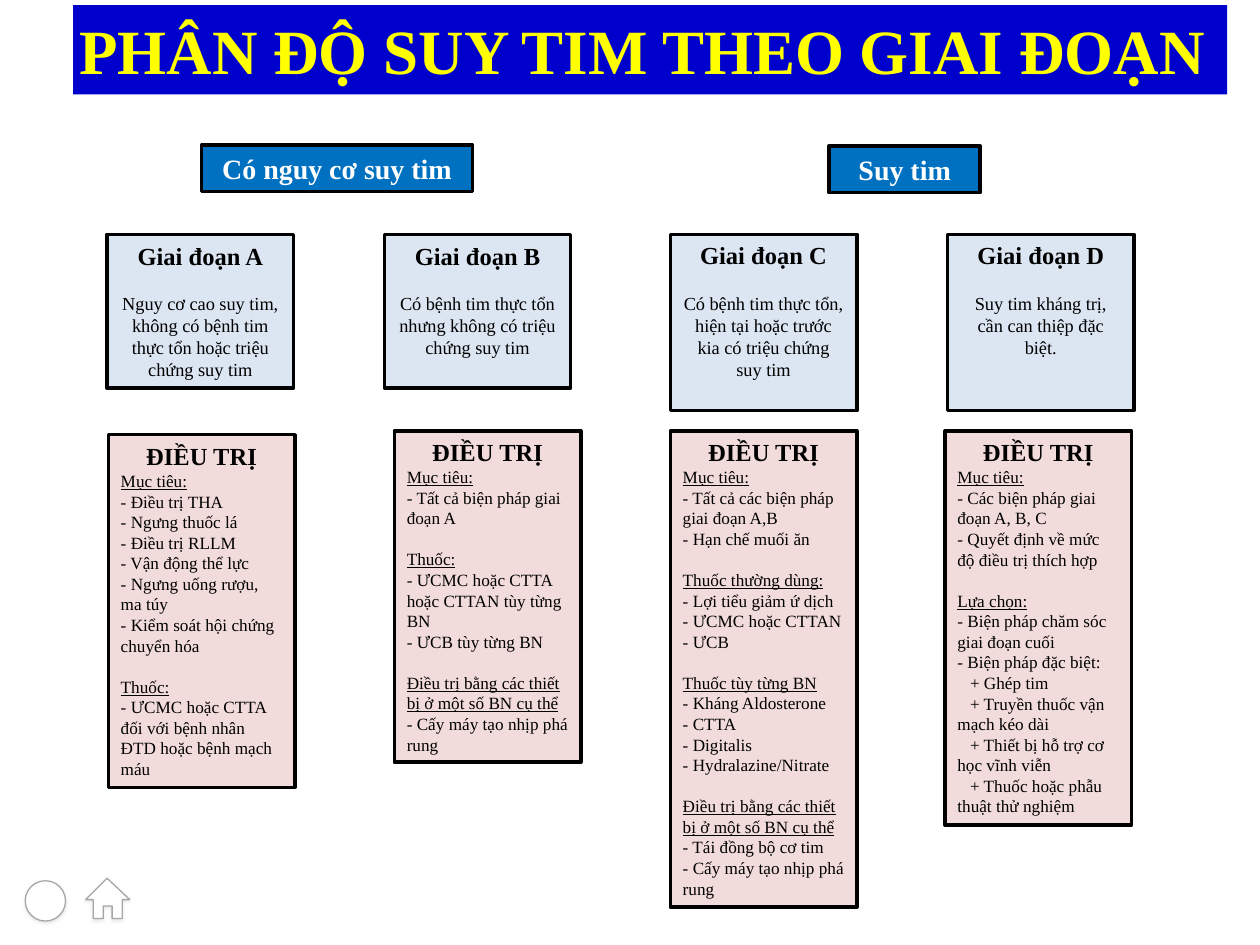
from lxml.etree import SubElement
from pptx import Presentation
from pptx.dml.color import RGBColor
from pptx.enum.shapes import MSO_SHAPE as SHAPE
from pptx.enum.text import PP_ALIGN as ALIGN
from pptx.oxml.ns import qn
from pptx.util import Inches, Pt

FONT = "Times New Roman"
BOX_W = 1.48
STAGE_TOP = 1.86

TITLE = "PHÂN ĐỘ SUY TIM THEO GIAI ĐOẠN"
# text, left, top, width
GROUPS = [("Có nguy cơ suy tim", 1.6, 1.15, 2.15), ("Suy tim", 6.58, 1.16, 1.2)]
# name, description, left, height
STAGES = [
    ("Giai đoạn A", "Nguy cơ cao suy tim, không có bệnh tim thực tổn hoặc triệu chứng suy tim", 0.85, 1.22),
    ("Giai đoạn B", "Có bệnh tim thực tổn nhưng không có triệu chứng suy tim", 3.05, 1.22),
    ("Giai đoạn C", "Có bệnh tim thực tổn, hiện tại hoặc trước kia có triệu chứng suy tim", 5.32, 1.4),
    ("Giai đoạn D", "Suy tim kháng trị, cần can thiệp đặc biệt.", 7.52, 1.4),
]
DEVICES = "Điều trị bằng các thiết bị ở một số BN cụ thể"
PACEMAKER = "- Cấy máy tạo nhịp phá rung"
# left, top, height, sections of (heading, items)
TREATMENTS = [
    (0.86, 3.45, 2.8, [
        ("Mục tiêu:", ["- Điều trị THA", "- Ngưng thuốc lá", "- Điều trị RLLM", "- Vận động thể lực",
                       "- Ngưng uống rượu, ma túy", "- Kiểm soát hội chứng chuyển hóa"]),
        ("Thuốc:", ["- ƯCMC hoặc CTTA đối với bệnh nhân ĐTD hoặc bệnh mạch máu"]),
    ]),
    (3.13, 3.42, 2.63, [
        ("Mục tiêu:", ["- Tất cả biện pháp giai đoạn A"]),
        ("Thuốc:", ["- ƯCMC hoặc CTTA hoặc CTTAN tùy từng BN", "- ƯCB tùy từng BN"]),
        (DEVICES, [PACEMAKER]),
    ]),
    (5.32, 3.42, 3.78, [
        ("Mục tiêu:", ["- Tất cả các biện pháp giai đoạn A,B", "- Hạn chế muối ăn"]),
        ("Thuốc thường dùng:", ["- Lợi tiểu giảm ứ dịch", "- ƯCMC hoặc CTTAN", "- ƯCB"]),
        ("Thuốc tùy từng BN", ["- Kháng Aldosterone", "- CTTA", "- Digitalis", "- Hydralazine/Nitrate"]),
        (DEVICES, ["- Tái đồng bộ cơ tim", PACEMAKER]),
    ]),
    (7.5, 3.42, 3.13, [
        ("Mục tiêu:", ["- Các biện pháp giai đoạn A, B, C", "- Quyết định về mức độ điều trị thích hợp"]),
        ("Lựa chọn:", ["- Biện pháp chăm sóc giai đoạn cuối", "- Biện pháp đặc biệt:", "+ Ghép tim",
                       "+ Truyền thuốc vận mạch kéo dài", "+ Thiết bị hỗ trợ cơ học vĩnh viễn",
                       "+ Thuốc hoặc phẫu thuật thử nghiệm"]),
    ]),
]
HOUSE = [(0.85, 6.97), (1.03, 7.14), (0.97, 7.14), (0.97, 7.29), (0.89, 7.29), (0.89, 7.19),
         (0.82, 7.19), (0.82, 7.29), (0.74, 7.29), (0.74, 7.14), (0.68, 7.14)]

prs = Presentation()
prs.slide_width, prs.slide_height = Inches(10), Inches(7.5)
shapes = prs.slides.add_slide(prs.slide_layouts[6]).shapes


def paint(sp, fill, line=None, width=2):
    sp.fill.solid()
    sp.fill.fore_color.rgb = RGBColor.from_string(fill)
    if line:
        sp.line.color.rgb = RGBColor.from_string(line)
        sp.line.width = Pt(width)


def add_box(left, top, width, height, fill, line="000000"):
    sp = shapes.add_textbox(*map(Inches, (left, top, width, height)))
    paint(sp, fill, line)
    sp.text_frame.word_wrap = True
    return sp.text_frame


def write(tf, text, size, color="000000", bold=False, underline=False,
          align=ALIGN.LEFT, before=0, indent=0):
    p = tf.paragraphs[0] if not tf.text else tf.add_paragraph()
    p.alignment, p.space_before = align, Pt(before)
    if indent:
        p._p.get_or_add_pPr().set("indent", str(Inches(indent)))
    r = p.add_run()
    r.text = text
    f = r.font
    f.name, f.size, f.bold, f.underline = FONT, Pt(size), bold, underline
    f.color.rgb = RGBColor.from_string(color)


def soft_shadow(sp):
    sp.shadow.inherit = False
    effects = sp._element.spPr.find(qn("a:effectLst"))
    shadow = SubElement(effects, qn("a:outerShdw"), blurRad=str(Pt(2)), dist=str(Pt(1)),
                        dir="5400000", rotWithShape="0")
    color = SubElement(shadow, qn("a:srgbClr"), val="474749")
    SubElement(color, qn("a:alpha"), val="12000")


# Navigation icons
circle = shapes.add_shape(SHAPE.OVAL, *map(Inches, (0.2, 6.99, 0.32, 0.32)))
builder = shapes.build_freeform(*map(Inches, HOUSE[0]), scale=1.0)
builder.add_line_segments([(Inches(x), Inches(y)) for x, y in HOUSE[1:]], close=True)
for icon in (circle, builder.convert_to_shape()):
    paint(icon, "FFFFFF", "A6A6A6", 0.75)
    soft_shadow(icon)

# Title bar
tf = add_box(0.58, 0.04, 9.16, 0.71, "0000CC", line=None)
tf.margin_left = tf.margin_right = tf.margin_top = tf.margin_bottom = Inches(0.05)
write(tf, TITLE, 36, color="FFFF00", bold=True)

# Group headings
for text, left, top, width in GROUPS:
    tf = add_box(left, top, width, 0.37, "0070C0")
    write(tf, text, 16, color="FFFFFF", bold=True, align=ALIGN.CENTER)

# Stages
for name, description, left, height in STAGES:
    tf = add_box(left, STAGE_TOP, BOX_W, height, "DCE6F2")
    write(tf, name, 14, bold=True, align=ALIGN.CENTER)
    write(tf, description, 10.5, align=ALIGN.CENTER, before=12.5)

# Treatments
for left, top, height, sections in TREATMENTS:
    tf = add_box(left, top, BOX_W, height, "F2DCDB")
    write(tf, "ĐIỀU TRỊ", 14, bold=True, align=ALIGN.CENTER)
    for i, (heading, items) in enumerate(sections):
        write(tf, heading, 9.8, underline=True, before=11.7 if i else 0)
        for item in items:
            write(tf, item, 9.8, indent=0.1 if item.startswith("+") else 0)

prs.save("out.pptx")
